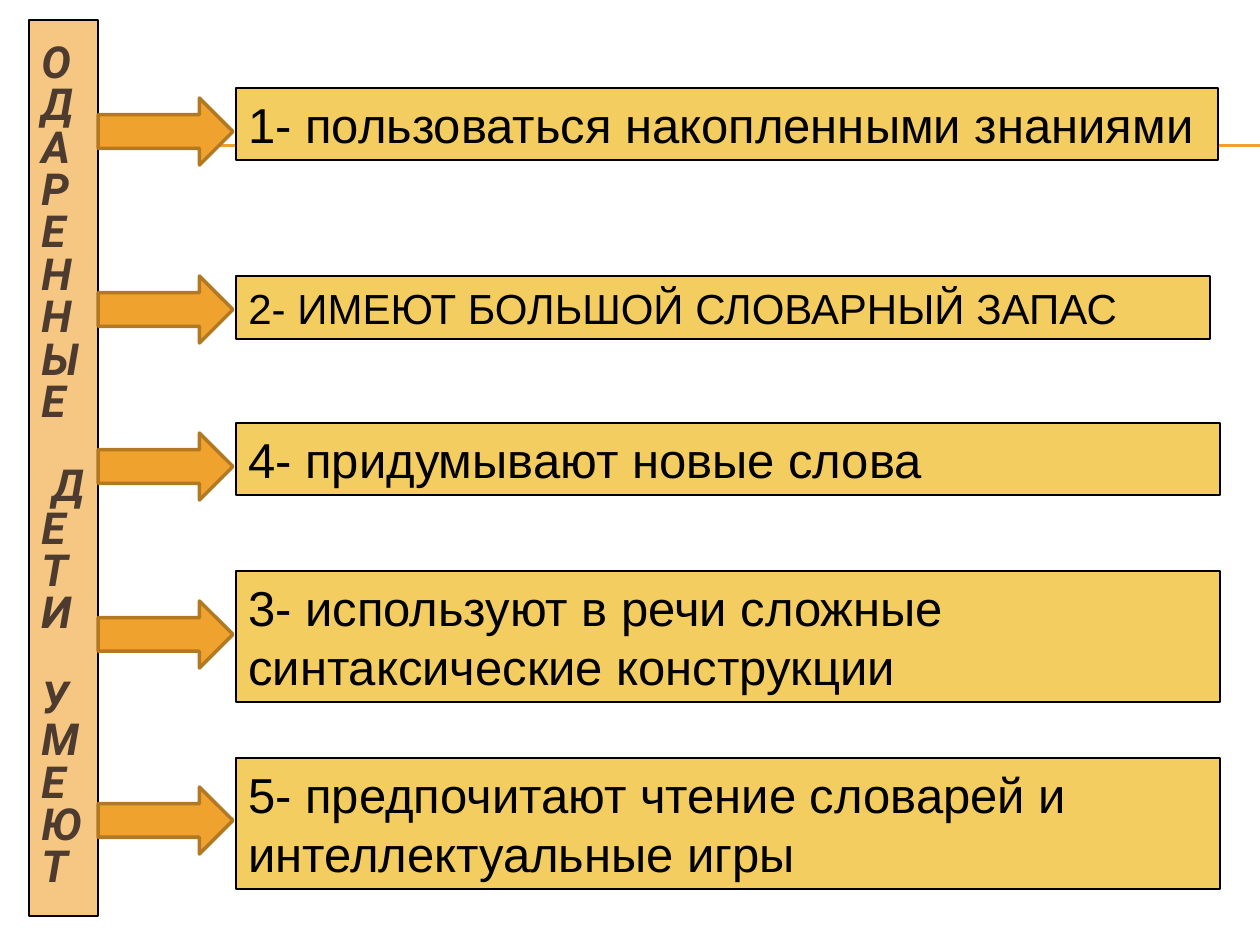
from lxml import etree
from pptx import Presentation
from pptx.dml.color import RGBColor
from pptx.enum.shapes import MSO_CONNECTOR, MSO_SHAPE
from pptx.enum.text import MSO_ANCHOR, PP_ALIGN
from pptx.oxml.ns import qn
from pptx.util import Emu, Pt

RECT, ARROW = MSO_SHAPE.RECTANGLE, MSO_SHAPE.RIGHT_ARROW
STRAIGHT = MSO_CONNECTOR.STRAIGHT
TOP, MIDDLE = MSO_ANCHOR.TOP, MSO_ANCHOR.MIDDLE
LEFT = PP_ALIGN.LEFT

PX_PER_INCH = 126
COLORS = {
    "banner": "F6C782", "banner_text": "4E3B30",
    "skill": "F3CD60", "black": "000000",
    "arrow": "F0A22E", "arrow_edge": "B27822",
}
WORDS = ("ОДАРЕННЫЕ", "ДЕТИ", "УМЕЮТ")
# text, box (left, top, width, height), arrow top, text size, border width, wrap
SKILLS = (
    ("1- пользоваться накопленными знаниями", (236, 88, 982, 72), 98, 28, 0.75, False),
    ("2- ИМЕЮТ БОЛЬШОЙ СЛОВАРНЫЙ ЗАПАС", (236, 276, 974, 63), 276, 24, 1.5, True),
    ("4- придумывают новые слова", (236, 423, 984, 72), 433, 28, 0.75, True),
    ("3- используют в речи сложные синтаксические конструкции",
     (236, 571, 984, 131), 601, 28, 0.75, True),
    ("5- предпочитают чтение словарей и интеллектуальные игры",
     (236, 758, 984, 131), 787, 28, 0.75, True),
)


def px(n):
    return Emu(round(n * 914400 / PX_PER_INCH))


def color(name):
    return RGBColor.from_string(COLORS[name])


def add_box(s, kind, box, fill, edge, width):
    sp = s.shapes.add_shape(kind, *map(px, box))
    sp.shadow.inherit = False
    sp.fill.solid()
    sp.fill.fore_color.rgb = color(fill)
    sp.line.color.rgb = color(edge)
    sp.line.width = Pt(width)
    return sp


def add_text(p, text, size, font, fill, bold=False, italic=False):
    p.alignment = LEFT
    r = p.add_run()
    r.text = text
    r.font.size, r.font.name = Pt(size), font
    r.font.bold, r.font.italic = bold, italic
    r.font.color.rgb = color(fill)


def add_rule(s, x1, x2, y):
    line = s.shapes.add_connector(STRAIGHT, px(x1), px(y), px(x2), px(y))
    line.line.color.rgb = color("arrow")
    line.line.width = Pt(0.75)
    etree.SubElement(line._element.spPr, qn("a:effectLst"))


def add_banner(s, box):
    """Stack the words one letter to a line, with a gap between words."""
    tf = add_box(s, RECT, box, "banner", "black", 0.75).text_frame
    tf.word_wrap = True
    tf.vertical_anchor = MIDDLE
    for i, word in enumerate(WORDS):
        for j, letter in enumerate(word):
            first = i == j == 0
            p = tf.paragraphs[0] if first else tf.add_paragraph()
            p.line_spacing = 0.8
            if i and j == 0:
                p.space_before = Pt(24)
            text = " Д" if letter == "Д" and i else letter
            add_text(p, text, 25.2, "Roboto", "banner_text", bold=True, italic=True)


def add_skill(s, text, box, size, border, wrap):
    tf = add_box(s, RECT, box, "skill", "black", border).text_frame
    tf.word_wrap = wrap
    tf.vertical_anchor = TOP
    add_text(tf.paragraphs[0], text, size, "Arial", "black")


def main():
    prs = Presentation()
    prs.slide_width, prs.slide_height = px(1260), px(945)
    s = prs.slides.add_slide(prs.slide_layouts[6])
    for y in (145, 146):
        add_rule(s, 71, 1260, y)
    add_banner(s, (29, 20, 69, 896))
    for text, box, arrow_top, size, border, wrap in SKILLS:
        add_skill(s, text, box, size, border, wrap)
        add_box(s, ARROW, (98, arrow_top, 135, 67), "arrow", "arrow_edge", 2)
    prs.save("out.pptx")


if __name__ == "__main__":
    main()
